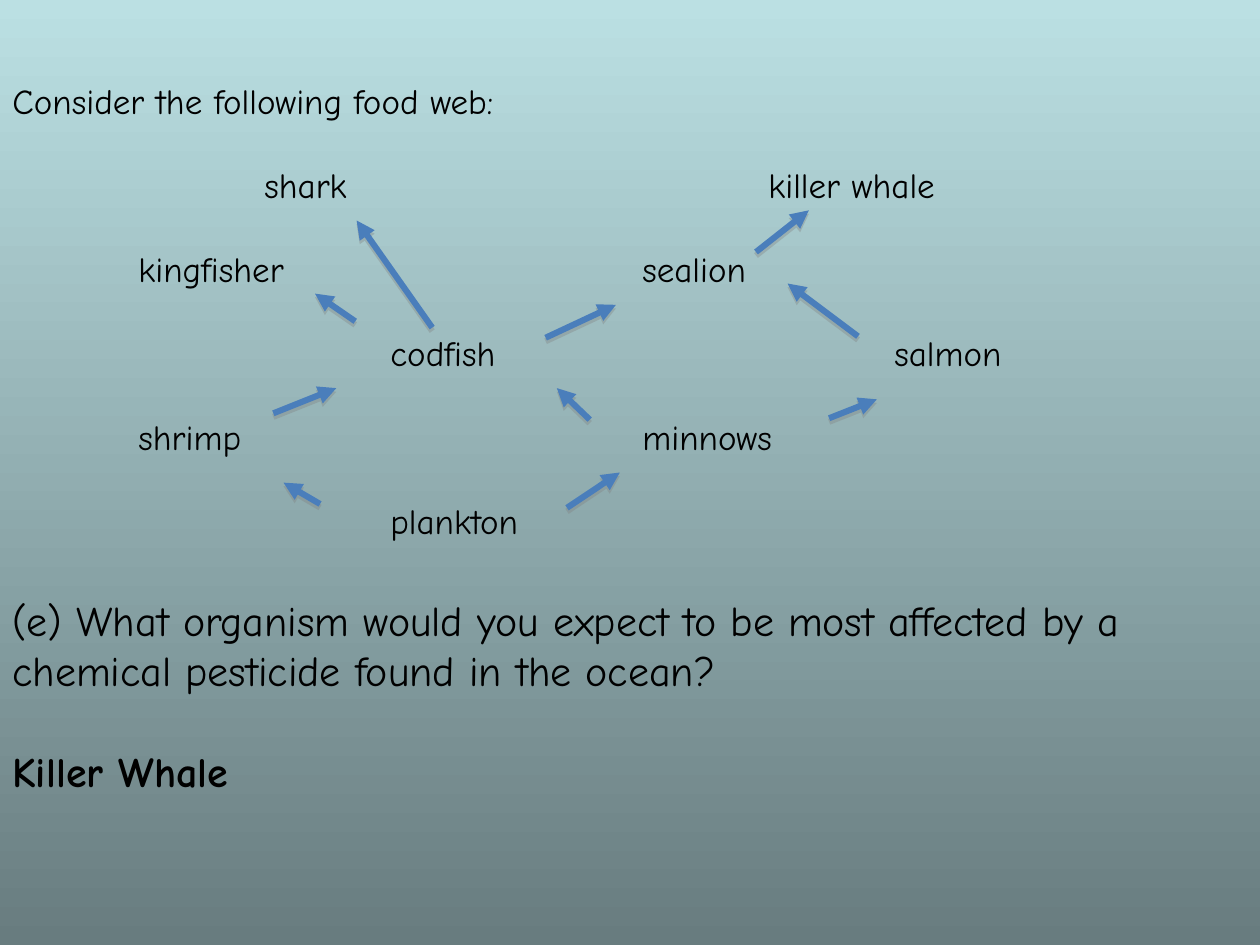
from pptx import Presentation
from pptx.dml.color import RGBColor
from pptx.enum.shapes import MSO_CONNECTOR
from pptx.enum.text import MSO_AUTO_SIZE
from pptx.oxml import parse_xml
from pptx.oxml.ns import nsdecls
from pptx.util import Pt


def color(hex_string):
    return RGBColor.from_string(hex_string)


deck = Presentation()
deck.slide_width, deck.slide_height = Pt(720), Pt(540)
page = deck.slides.add_slide(deck.slide_layouts[6])

# Background: vertical gradient, light at the top
fill = page.background.fill
fill.gradient()
fill.gradient_angle = 270
for stop, shade in zip(fill.gradient_stops, ("BBE0E3", "687C7F")):
    stop.color.rgb = color(shade)

# Arrows from food to eater: start x, start y, end x, end y in points
arrows = [
    (203, 183.6, 180, 167.8),    # codfish to kingfisher
    (311.8, 193, 352, 174.2),    # codfish to sealion
    (337, 239.8, 318.2, 221.8),  # minnows to codfish
    (432, 144, 462.2, 120.2),    # sealion to killer whale
    (324, 290.2, 354.2, 270),    # plankton to minnows
    (156.2, 236.2, 192.2, 221.8),  # shrimp to codfish
    (247, 187.2, 203.8, 126),    # codfish to shark
    (182.9, 288, 162, 275.8),    # plankton to shrimp
    (490.3, 192.2, 450, 162),    # salmon to sealion
    (473.8, 239, 501.1, 228.2),  # minnows to salmon
]
for ends in arrows:
    arrow = page.shapes.add_connector(MSO_CONNECTOR.STRAIGHT, *map(Pt, ends))
    arrow.line.width = Pt(3.5)
    arrow.line.color.rgb = color("4A7EBB")
    arrow.line._get_or_add_ln().append(
        parse_xml(f'<a:tailEnd {nsdecls("a")} type="triangle"/>'))
    arrow._element.spPr.append(parse_xml(
        f'<a:effectLst {nsdecls("a")}>'
        f'<a:outerShdw blurRad="0" dist="{Pt(2)}" dir="5400000" rotWithShape="0">'
        '<a:srgbClr val="808080"><a:alpha val="35000"/></a:srgbClr>'
        '</a:outerShdw></a:effectLst>'))

# Texts: top, height, font size, gap between paragraphs, lines
food_web = [
    "Consider the following food web:",
    "\t\tshark\t\t\t\tkiller whale",
    "\tkingfisher\t\t\tsealion",
    "\t\t\tcodfish\t\t\t\tsalmon",
    "\tshrimp\t\t\t\tminnows",
    "\t\t\tplankton",
]
question = [
    "(e) What organism would you expect to be most affected by a "
    "chemical pesticide found in the ocean?",
    "Killer Whale",
]
tab_stops = "".join(f'<a:tab pos="{Pt(72 * n)}" algn="l"/>' for n in range(1, 9))

for top, height, size, gap, lines in (
    (42, 273.6, 20, 24, food_web),
    (336, 123.8, 24, 29, question),
):
    box = page.shapes.add_textbox(Pt(0), Pt(top), Pt(720), Pt(height))
    frame = box.text_frame
    frame.word_wrap = True
    frame.auto_size = MSO_AUTO_SIZE.NONE
    for index, line in enumerate(lines):
        para = frame.paragraphs[0] if index == 0 else frame.add_paragraph()
        para.space_before = Pt(gap if index else 0)
        para._p.get_or_add_pPr().append(
            parse_xml(f'<a:tabLst {nsdecls("a")}>{tab_stops}</a:tabLst>'))
        span = para.add_run()
        span.text = line
        span.font.color.rgb = color("000000")
        style = {"name": "Comic Neue", "size": Pt(size), "bold": line == "Killer Whale"}
        for name, value in style.items():
            setattr(span.font, name, value)

deck.save("out.pptx")
